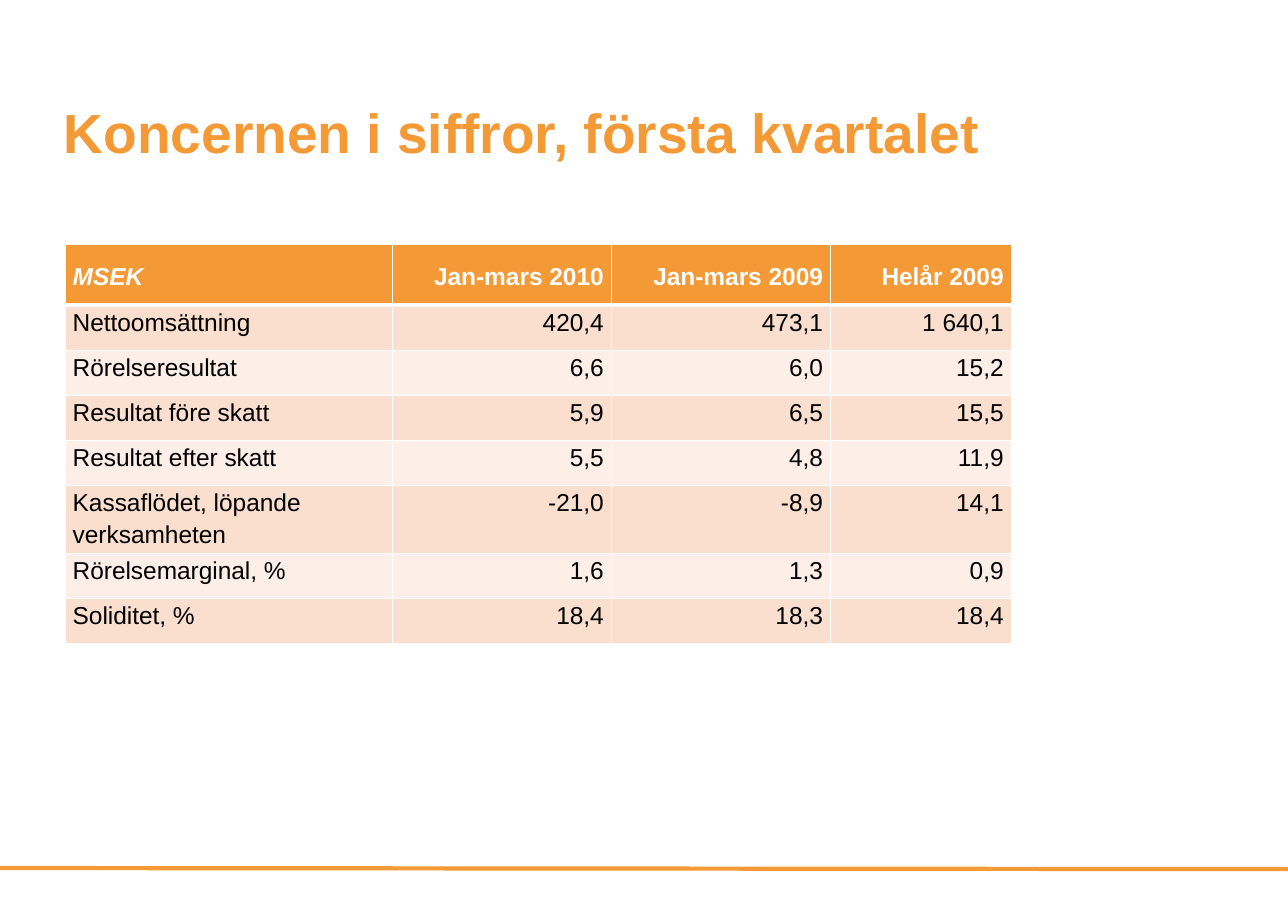
"""Build the slide with the group's key figures for the first quarter."""
from dataclasses import dataclass

from lxml.etree import SubElement
from pptx import Presentation
from pptx.dml.color import RGBColor
from pptx.enum.shapes import MSO_CONNECTOR
from pptx.enum.text import MSO_ANCHOR, PP_ALIGN
from pptx.oxml.ns import qn
from pptx.util import Inches, Pt

TITLE = "Koncernen i siffror, första kvartalet"
FIGURES = [
    ("MSEK", "Jan-mars 2010", "Jan-mars 2009", "Helår 2009"),
    ("Nettoomsättning", "420,4", "473,1", "1 640,1"),
    ("Rörelseresultat", "6,6", "6,0", "15,2"),
    ("Resultat före skatt", "5,9", "6,5", "15,5"),
    ("Resultat efter skatt", "5,5", "4,8", "11,9"),
    ("Kassaflödet, löpande verksamheten", "-21,0", "-8,9", "14,1"),
    ("Rörelsemarginal, %", "1,6", "1,3", "0,9"),
    ("Soliditet, %", "18,4", "18,3", "18,4"),
]
COLUMN_WIDTHS = (2.97, 1.99, 1.99, 1.64)
HEADER_HEIGHT, ROW_HEIGHT = 0.55, 0.41
SLIDE_WIDTH, SLIDE_HEIGHT = 11.69, 8.27


@dataclass(frozen=True)
class Theme:
    font: str = "Arial"
    accent: str = "F39936"
    white: str = "FFFFFF"
    black: str = "000000"
    bands: tuple = ("FDEFE8", "FADECE")
    title_size: float = 36
    table_size: float = 16
    rule_width: float = 2.75
    border_width: float = 1
    header_border_width: float = 3


THEME = Theme()


def style_font(paragraph, size, color, bold=False, italic=False):
    font = paragraph.font
    font.name, font.size = THEME.font, Pt(size)
    font.bold, font.italic = bold, italic
    font.color.rgb = RGBColor.from_string(color)


def add_footer_rule(page):
    rule = page.shapes.add_connector(
        MSO_CONNECTOR.STRAIGHT, 0, Inches(7.88), Inches(SLIDE_WIDTH), Inches(7.89))
    rule.line.color.rgb = RGBColor.from_string(THEME.accent)
    rule.line.width = Pt(THEME.rule_width)
    SubElement(rule._element.spPr, qn("a:effectLst"))


def add_title(page):
    box = page.shapes.add_textbox(Inches(0.58), Inches(0.89), Inches(10.86), Inches(1.02))
    frame = box.text_frame
    frame.word_wrap = True
    frame.margin_left = frame.margin_right = frame.margin_top = frame.margin_bottom = 0
    frame.text = TITLE
    style_font(frame.paragraphs[0], THEME.title_size, THEME.accent, bold=True)


def add_borders(cell, row):
    widths = {
        "a:lnL": THEME.border_width,
        "a:lnR": THEME.border_width,
        "a:lnT": THEME.header_border_width if row == 1 else THEME.border_width,
        "a:lnB": THEME.header_border_width if row == 0 else THEME.border_width,
    }
    properties = cell._tc.get_or_add_tcPr()
    for side, width in widths.items():
        line = SubElement(properties, qn(side), w=str(Pt(width)))
        fill = SubElement(line, qn("a:solidFill"))
        SubElement(fill, qn("a:srgbClr"), val=THEME.white)


def fill_cell(cell, text, row, column):
    header = row == 0
    add_borders(cell, row)
    cell.fill.solid()
    cell.fill.fore_color.rgb = RGBColor.from_string(
        THEME.accent if header else THEME.bands[row % 2])
    cell.margin_left = cell.margin_right = Inches(0.07)
    cell.margin_top = cell.margin_bottom = 0
    cell.vertical_anchor = MSO_ANCHOR.MIDDLE if header else MSO_ANCHOR.TOP
    cell.text = text
    paragraph = cell.text_frame.paragraphs[0]
    paragraph.alignment = PP_ALIGN.RIGHT if column else PP_ALIGN.LEFT
    paragraph.line_spacing = 1.15
    style_font(paragraph, THEME.table_size, THEME.white if header else THEME.black,
               bold=header, italic=header and column == 0)


def add_figures(page):
    heights = [HEADER_HEIGHT] + [ROW_HEIGHT] * (len(FIGURES) - 1)
    table = page.shapes.add_table(
        len(FIGURES), len(COLUMN_WIDTHS), Inches(0.59), Inches(2.22),
        Inches(sum(COLUMN_WIDTHS)), Inches(sum(heights))).table
    for column, width in zip(table.columns, COLUMN_WIDTHS):
        column.width = Inches(width)
    for row, height in zip(table.rows, heights):
        row.height = Inches(height)
    for row, values in enumerate(FIGURES):
        for column, text in enumerate(values):
            fill_cell(table.cell(row, column), text, row, column)


def main():
    deck = Presentation()
    deck.slide_width, deck.slide_height = Inches(SLIDE_WIDTH), Inches(SLIDE_HEIGHT)
    page = deck.slides.add_slide(deck.slide_layouts[6])
    add_footer_rule(page)
    add_title(page)
    add_figures(page)
    deck.save("out.pptx")


if __name__ == "__main__":
    main()
